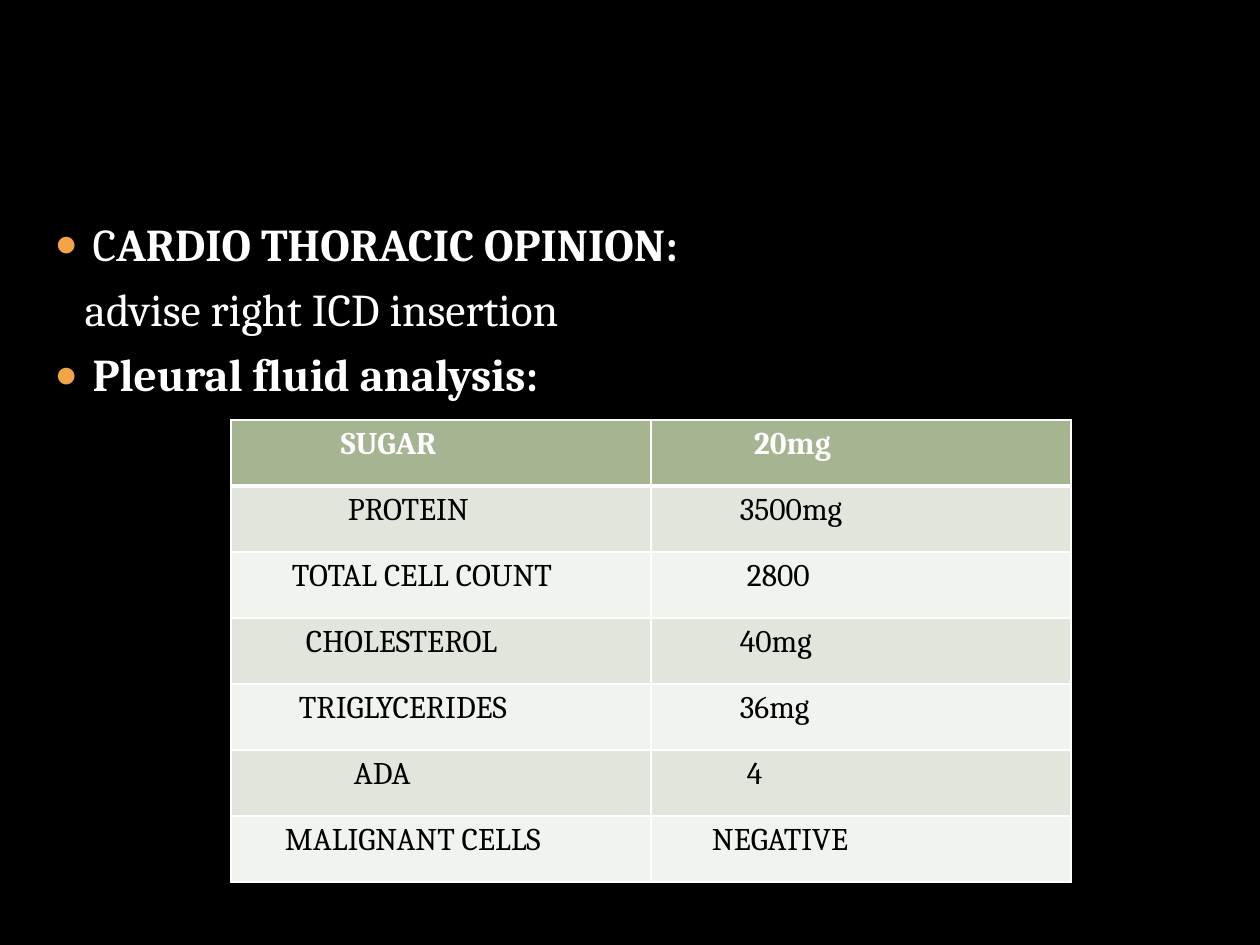
from lxml.etree import SubElement
from pptx import Presentation
from pptx.dml.color import RGBColor
from pptx.enum.text import MSO_ANCHOR, PP_ALIGN
from pptx.oxml.ns import qn
from pptx.util import Pt

PX = 914400 / 126
COLORS = {
    "background": "000000",
    "light": "FFFFFF",
    "dark": "000000",
    "bullet": "F3A447",
    "header": "A5B592",
    "odd": "E1E5DC",
    "even": "F0F3EE",
}


def px(length):
    return round(length * PX)


def add_text(para, text, size=18, color="light", bold=False):
    span = para.add_run()
    span.text = text
    span.font.name = "Cambria"
    span.font.size = Pt(size)
    span.font.bold = bold
    span.font.color.rgb = RGBColor.from_string(COLORS[color])


deck = Presentation()
deck.slide_width, deck.slide_height = px(1260), px(945)
page = deck.slides.add_slide(deck.slide_layouts[1])
page.background.fill.solid()
page.background.fill.fore_color.rgb = RGBColor.from_string(COLORS["background"])

# The slide has no title
title = page.shapes.title
title.element.getparent().remove(title.element)

# Findings list: bulleted flag, then (text, bold) spans
findings = [
    (True, [("C", False), ("ARDIO THORACIC OPINION:", True)]),
    (False, [("advise right ICD insertion", False)]),
    (True, [("Pleural fluid analysis:", True)]),
]
body = page.placeholders[1]
body.left, body.top, body.width, body.height = px(42), px(210), px(1172), px(703)
frame = body.text_frame
frame.vertical_anchor = MSO_ANCHOR.TOP
for index, (bulleted, spans) in enumerate(findings):
    para = frame.paragraphs[0] if index == 0 else frame.add_paragraph()
    para.alignment = PP_ALIGN.LEFT
    para.space_before = Pt(6 if index else 0)
    props = para._p.get_or_add_pPr()
    if bulleted:
        props.set("marL", str(px(38)))
        props.set("indent", str(px(-38)))
        bullet_color = SubElement(props, qn("a:buClr"))
        SubElement(bullet_color, qn("a:srgbClr"), val=COLORS["bullet"])
        SubElement(props, qn("a:buSzPct"), val="85000")
        SubElement(props, qn("a:buChar"), char="●")
    else:
        props.set("marL", str(px(30)))
        props.set("indent", "0")
        SubElement(props, qn("a:buNone"))
    for text, bold in spans:
        add_text(para, text, size=26, bold=bold)

# Pleural fluid table: each cell is (text, left margin in px)
results = [
    [("SUGAR", 110), ("20mg", 103)],
    [("PROTEIN", 117), ("3500mg", 89)],
    [("TOTAL CELL COUNT", 61), ("2800", 96)],
    [("CHOLESTEROL", 75), ("40mg", 89)],
    [("TRIGLYCERIDES", 68), ("36mg", 89)],
    [("ADA", 123), ("4", 96)],
    [("MALIGNANT CELLS", 54), ("NEGATIVE", 61)],
]
table = page.shapes.add_table(
    len(results), 2, px(231), px(420), px(840), px(66 * len(results))
).table
for column in table.columns:
    column.width = px(420)
for row_index, row in enumerate(results):
    table.rows[row_index].height = px(66)
    is_header = row_index == 0
    fill = "header" if is_header else "odd" if row_index % 2 else "even"
    for column_index, (text, margin) in enumerate(row):
        cell = table.cell(row_index, column_index)
        cell.margin_left = px(margin)

        # White borders, heavier around the foot of the header
        cell_props = cell._tc.get_or_add_tcPr()
        for side in ("L", "R", "T", "B"):
            heavy = (row_index, side) in ((0, "B"), (1, "T"))
            line = SubElement(cell_props, qn(f"a:ln{side}"), w=str(Pt(3 if heavy else 1)))
            line_fill = SubElement(line, qn("a:solidFill"))
            SubElement(line_fill, qn("a:srgbClr"), val=COLORS["light"])

        cell.fill.solid()
        cell.fill.fore_color.rgb = RGBColor.from_string(COLORS[fill])
        add_text(
            cell.text_frame.paragraphs[0],
            text,
            color="light" if is_header else "dark",
            bold=is_header,
        )

deck.save("out.pptx")
